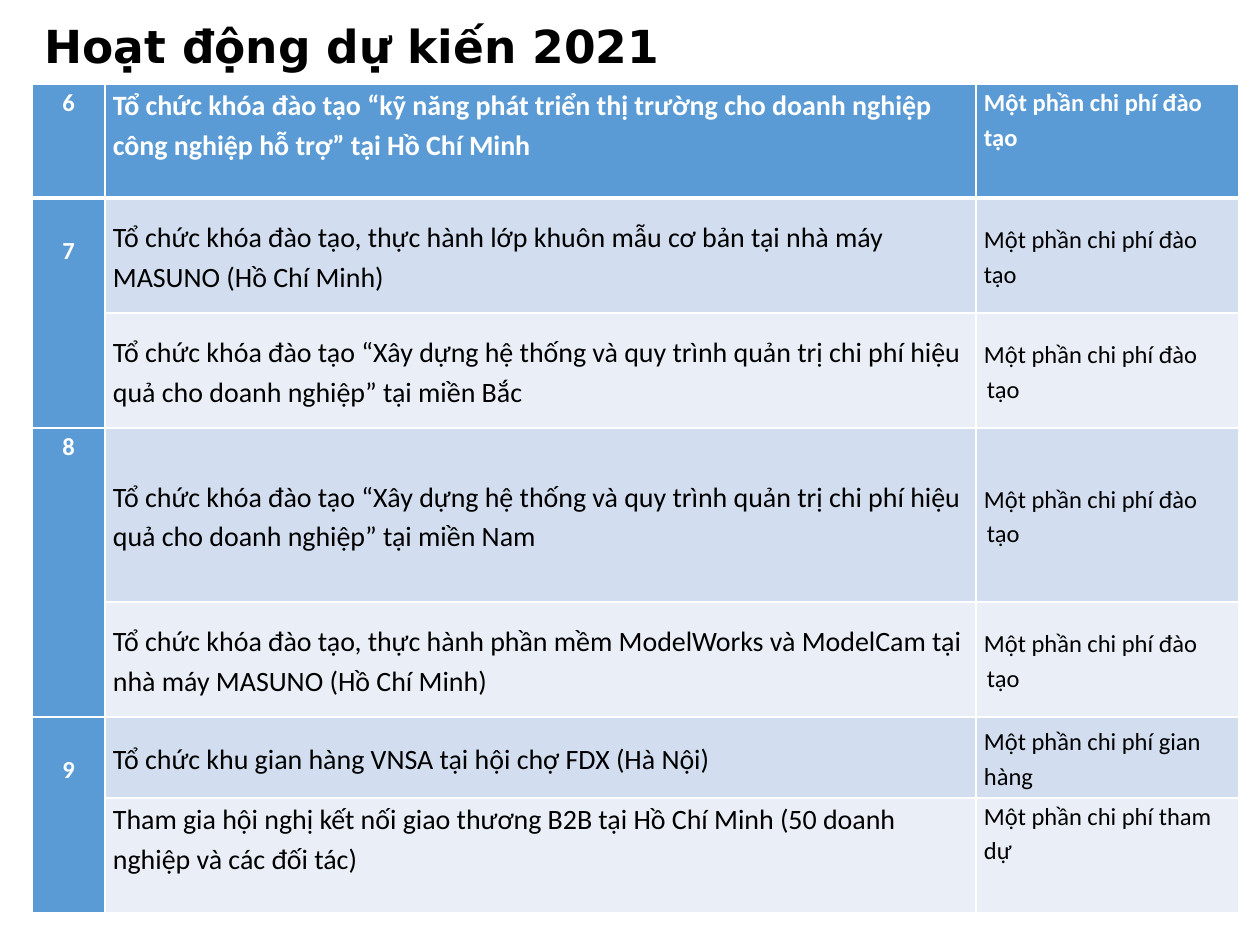
from lxml.etree import SubElement
from pptx import Presentation
from pptx.dml.color import RGBColor
from pptx.enum.text import MSO_ANCHOR as Anchor, PP_ALIGN as Align
from pptx.oxml.ns import qn
from pptx.util import Pt

PX = 914400 / 126
WHITE, BLACK = "FFFFFF", "000000"
BLUE, BANDS = "5B9BD5", ("EAEFF7", "D2DEEF")

TITLE = "Hoạt động dự kiến 2021"
TRAINING_COST = "Một phần chi phí đào tạo"
ACTIVITIES = [
    ("Tổ chức khóa đào tạo “kỹ năng phát triển thị trường cho doanh nghiệp "
     "công nghiệp hỗ trợ” tại Hồ Chí Minh", TRAINING_COST),
    ("Tổ chức khóa đào tạo, thực hành lớp khuôn mẫu cơ bản tại nhà máy "
     "MASUNO (Hồ Chí Minh)", TRAINING_COST),
    ("Tổ chức khóa đào tạo “Xây dựng hệ thống và quy trình quản trị chi phí "
     "hiệu quả cho doanh nghiệp” tại miền Bắc", TRAINING_COST),
    ("Tổ chức khóa đào tạo “Xây dựng hệ thống và quy trình quản trị chi phí "
     "hiệu quả cho doanh nghiệp” tại miền Nam", TRAINING_COST),
    ("Tổ chức khóa đào tạo, thực hành phần mềm ModelWorks và ModelCam tại "
     "nhà máy MASUNO (Hồ Chí Minh)", TRAINING_COST),
    ("Tổ chức khu gian hàng VNSA tại hội chợ FDX (Hà Nội)",
     "Một phần chi phí gian hàng"),
    ("Tham gia hội nghị kết nối giao thương B2B tại Hồ Chí Minh "
     "(50 doanh nghiệp và các đối tác)", "Một phần chi phí tham dự"),
]
NUMBERS = [("6", 0, 0, 0), ("7", 1, 2, 34), ("8", 3, 4, 0), ("9", 5, 6, 34)]
COLUMN_WIDTHS = [73, 871, 263]
ROW_HEIGHTS = [114, 115, 115, 174, 115, 81, 115]
HANGING_ROWS = (2, 3, 4)
LAST_ROW = len(ACTIVITIES) - 1


def px(length):
    """Turn pixels into EMU."""
    return round(length * PX)


def color(value):
    """Turn a hex string into a colour."""
    return RGBColor.from_string(value)


def set_borders(cell, row):
    """Draw white cell borders, thick between the header and the body."""
    properties = cell._tc.get_or_add_tcPr()
    widths = {"lnL": 1, "lnR": 1, "lnT": 3 if row == 1 else 1,
              "lnB": 3 if row == 0 else 1}
    for position, (tag, width) in enumerate(widths.items()):
        line = SubElement(properties, qn(f"a:{tag}"), w=str(Pt(width)))
        fill = SubElement(line, qn("a:solidFill"))
        SubElement(fill, qn("a:srgbClr"), val=WHITE)
        properties.insert(position, line)


def write_cell(cell, text, size, heading, top=0):
    """Write and format the text of one cell."""
    cell.text = text
    cell.margin_left = cell.margin_right = px(8)
    cell.margin_top, cell.margin_bottom = px(top), 0
    paragraph = cell.text_frame.paragraphs[0]
    paragraph.line_spacing = 1.15
    font = paragraph.font
    font.name, font.size, font.bold = "Calibri", Pt(size), heading
    font.color.rgb = color(WHITE if heading else BLACK)
    return paragraph


def add_title(slide):
    """Place and format the title."""
    title = slide.shapes.title
    title.left, title.top, title.width, title.height = map(px, (32, 0, 1143, 97))
    title.text_frame.text = TITLE
    title.text_frame.vertical_anchor = Anchor.MIDDLE
    paragraph = title.text_frame.paragraphs[0]
    paragraph.alignment, paragraph.line_spacing = Align.LEFT, 0.9
    font = paragraph.font
    font.name, font.size, font.bold = "DejaVu Sans", Pt(26), True
    font.color.rgb = color(BLACK)


def add_activities(slide):
    """Build the table of activities."""
    table = slide.shapes.add_table(
        len(ACTIVITIES), len(COLUMN_WIDTHS), px(32), px(84),
        px(sum(COLUMN_WIDTHS)), px(sum(ROW_HEIGHTS))).table
    for column, width in zip(table.columns, COLUMN_WIDTHS):
        column.width = px(width)
    for row, height in zip(table.rows, ROW_HEIGHTS):
        row.height = px(height)

    for row, texts in enumerate(ACTIVITIES):
        for column in range(len(COLUMN_WIDTHS)):
            cell = table.cell(row, column)
            heading = row == 0 or column == 0
            cell.fill.solid()
            cell.fill.fore_color.rgb = color(BLUE if heading else BANDS[row % 2])
            set_borders(cell, row)
        for column, (text, size) in enumerate(zip(texts, (16, 14)), 1):
            cell = table.cell(row, column)
            paragraph = write_cell(cell, text, size, row == 0)
            if 0 < row < LAST_ROW:
                cell.vertical_anchor = Anchor.MIDDLE
                paragraph.space_before = Pt(10)
            if column == 2 and row in HANGING_ROWS:
                properties = paragraph._p.get_or_add_pPr()
                properties.set("marL", str(px(3)))
                properties.set("indent", str(px(-3)))

    for number, first, last, top in NUMBERS:
        cell = table.cell(first, 0)
        if last > first:
            cell.merge(table.cell(last, 0))
        write_cell(cell, number, 14, True, top).alignment = Align.CENTER


def main():
    """Build and save the presentation."""
    presentation = Presentation()
    presentation.slide_width, presentation.slide_height = px(1260), px(945)
    slide = presentation.slides.add_slide(presentation.slide_layouts[5])
    add_title(slide)
    add_activities(slide)
    presentation.save("out.pptx")


if __name__ == "__main__":
    main()
